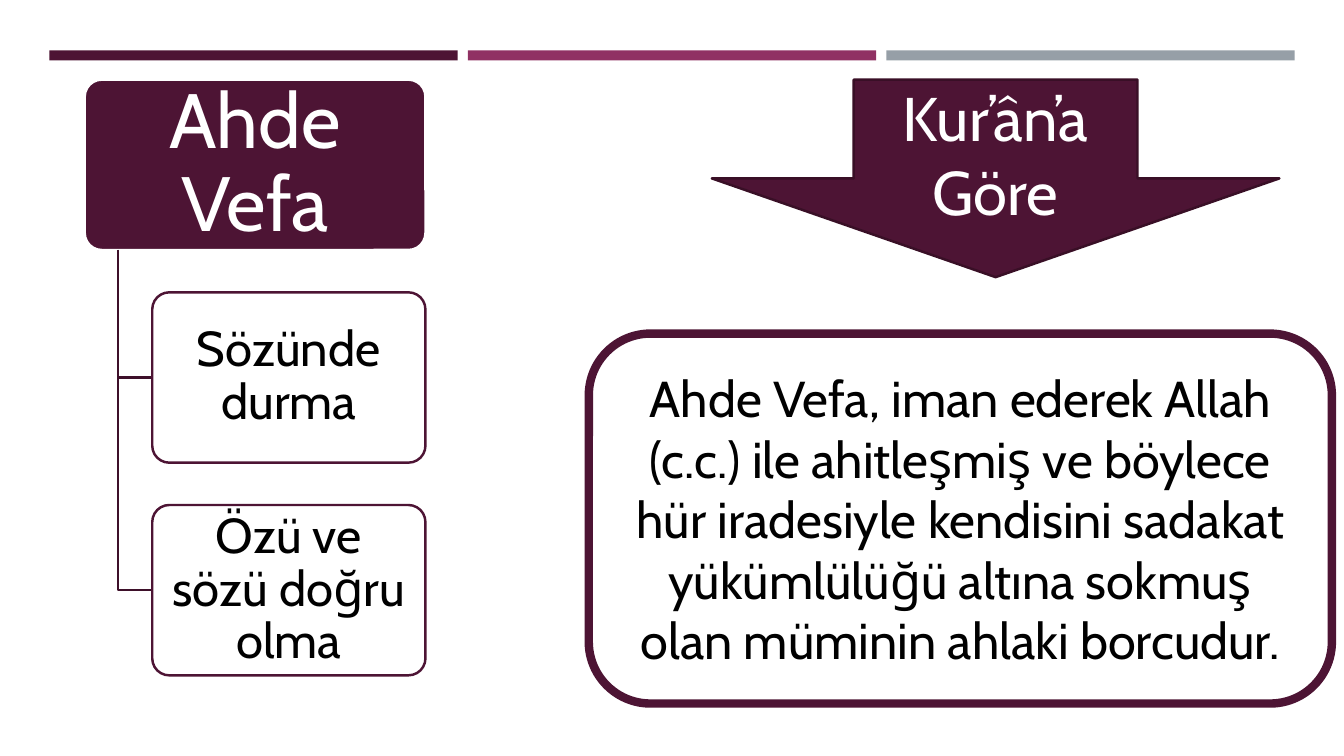
from lxml.etree import SubElement
from pptx import Presentation
from pptx.dml.color import RGBColor
from pptx.enum.shapes import MSO_SHAPE
from pptx.enum.text import MSO_ANCHOR, PP_ALIGN
from pptx.oxml.ns import qn
from pptx.util import Inches, Pt

PLUM, MAGENTA, GRAY = "4D1434", "903163", "969FA7"
WHITE, BLACK = "FFFFFF", "000000"


def color(hex_string):
    return RGBColor.from_string(hex_string)


def write(shape, text, size, ink=BLACK, font="Cabin", spacing=1.0, insets=(0.1, 0.05)):
    """Centre the text in the shape; insets are horizontal and vertical inches."""
    frame = shape.text_frame
    frame.word_wrap = True
    frame.vertical_anchor = MSO_ANCHOR.MIDDLE
    frame.margin_left = frame.margin_right = Inches(insets[0])
    frame.margin_top = frame.margin_bottom = Inches(insets[1])
    paragraph = frame.paragraphs[0]
    paragraph.alignment = PP_ALIGN.CENTER
    paragraph.line_spacing = spacing
    run = paragraph.add_run()
    run.text = text
    run.font.name = font
    run.font.size = Pt(size)
    run.font.color.rgb = color(ink)


class SlideBuilder:
    def __init__(self, slide, line_width=1.75):
        self.slide = slide
        self.line_width = line_width

    def outline(self, shape, line, width=None):
        shape.shadow.inherit = False
        if line is None:
            shape.line.fill.background()
        else:
            shape.line.color.rgb = color(line)
            shape.line.width = Pt(width or self.line_width)

    def shape(self, kind, left, top, width, height, fill, line=None, line_width=None):
        shape = self.slide.shapes.add_shape(
            kind, Inches(left), Inches(top), Inches(width), Inches(height))
        shape.fill.solid()
        shape.fill.fore_color.rgb = color(fill)
        self.outline(shape, line, line_width)
        return shape

    def tree_box(self, left, top, width, height, fill, line, opacity=100):
        box = self.shape(MSO_SHAPE.ROUNDED_RECTANGLE, left, top, width, height, fill, line)
        box.adjustments[0] = 0.1
        if opacity < 100:
            fill_color = box.fill._xPr.find(qn("a:solidFill"))[0]
            SubElement(fill_color, qn("a:alpha")).set("val", str(opacity * 1000))
        return box

    def elbow(self, start_x, start_y, end_x, end_y, line):
        """Draw a line down from the start, then across to the end."""
        builder = self.slide.shapes.build_freeform(Inches(start_x), Inches(start_y))
        builder.add_line_segments(
            [(Inches(start_x), Inches(end_y)), (Inches(end_x), Inches(end_y))], close=False)
        elbow = builder.convert_to_shape()
        elbow.fill.background()
        self.outline(elbow, line)


def add_header_bars(builder):
    for index, fill in enumerate((PLUM, MAGENTA, GRAY)):
        builder.shape(MSO_SHAPE.RECTANGLE, 0.49 + index * 4.15, 0.5, 4.05, 0.1, fill)


def add_tree(builder):
    top, height, pitch = 0.79, 1.69, 2.11
    child_left, trunk_x = 1.51, 1.17
    root = builder.tree_box(0.84, top, 3.38, height, PLUM, WHITE)
    write(root, "Ahde Vefa", 55, ink=WHITE, spacing=0.9, insets=(0.11, 0.08))
    for level, text in enumerate(("Sözünde durma", "Özü ve sözü doğru olma"), start=1):
        child_top = top + level * pitch
        builder.elbow(trunk_x, top + height, child_left, child_top + height / 2, "3E102A")
        child = builder.tree_box(child_left, child_top, 2.71, height, WHITE, PLUM, opacity=90)
        write(child, text, 35, spacing=0.9, insets=(0.07, 0.05))


def add_definition(builder):
    arrow = builder.shape(MSO_SHAPE.DOWN_ARROW, 7.06, 0.79, 5.63, 1.96, PLUM, "390F26")
    write(arrow, "Kur’ân’a Göre", 44, ink=WHITE)
    panel = builder.shape(
        MSO_SHAPE.ROUNDED_RECTANGLE, 5.84, 3.31, 7.37, 3.67, WHITE, PLUM, line_width=6)
    write(panel, "Ahde Vefa, iman ederek Allah (c.c.) ile ahitleşmiş ve böylece hür "
                 "iradesiyle kendisini sadakat yükümlülüğü altına sokmuş olan müminin "
                 "ahlaki borcudur.", 36)


def main():
    presentation = Presentation()
    presentation.slide_width = Inches(13.33)
    presentation.slide_height = Inches(7.5)
    builder = SlideBuilder(presentation.slides.add_slide(presentation.slide_layouts[6]))
    add_header_bars(builder)
    add_definition(builder)
    add_tree(builder)
    presentation.save("out.pptx")


if __name__ == "__main__":
    main()
